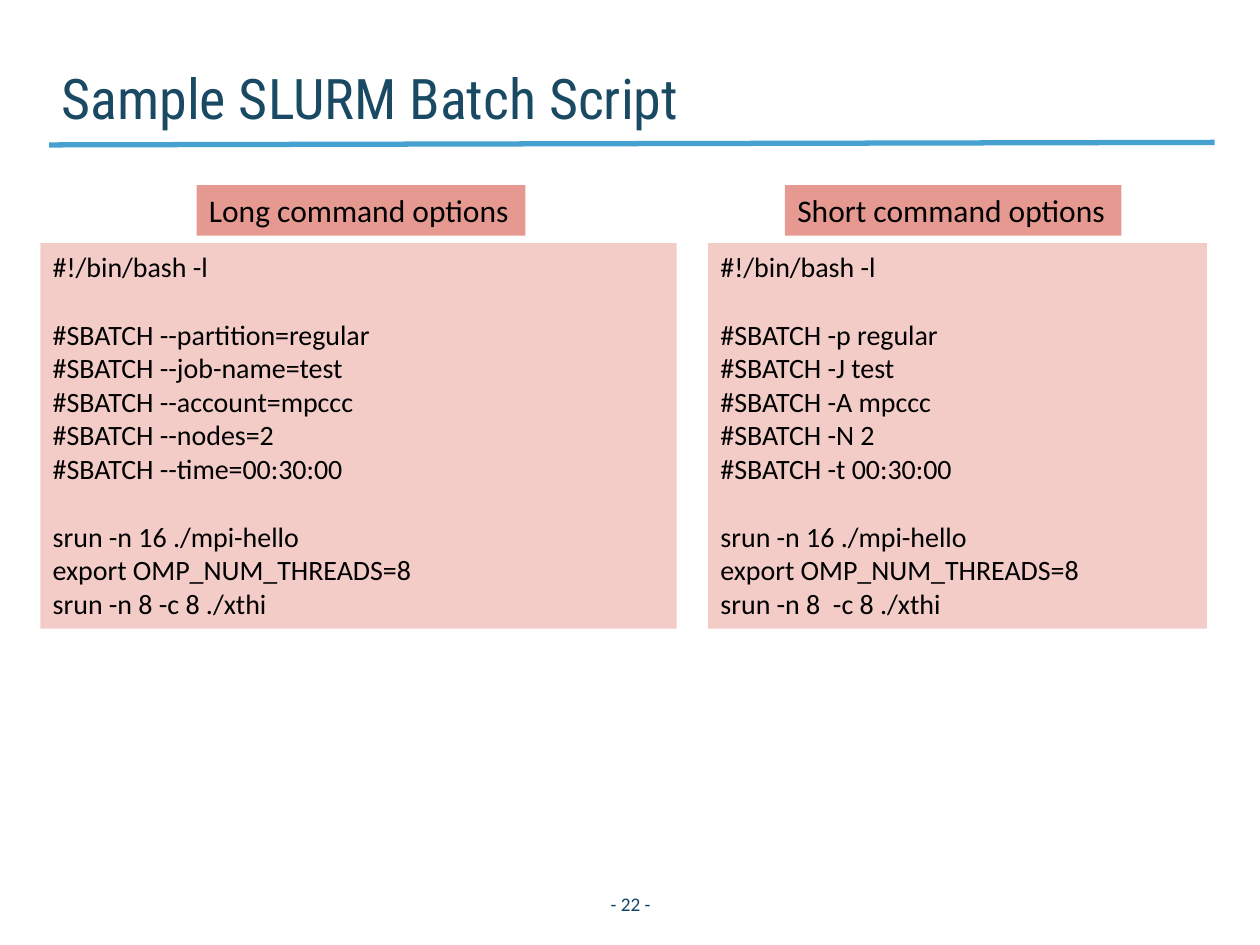
"""Build a slide comparing long and short SLURM batch options."""
from lxml.etree import SubElement
from pptx import Presentation
from pptx.dml.color import RGBColor
from pptx.enum.shapes import MSO_CONNECTOR as Connector, MSO_SHAPE as Shape
from pptx.enum.text import MSO_ANCHOR as Anchor, PP_ALIGN as Align
from pptx.oxml.ns import qn
from pptx.util import Inches, Pt

NAVY = RGBColor(0x19, 0x49, 0x63)
TEAL = RGBColor(0x11, 0x47, 0x66)
BLUE = RGBColor(0x46, 0xA0, 0xD0)
PINK = RGBColor(0xF3, 0xCC, 0xC8)
ROSE = RGBColor(0xE6, 0x99, 0x91)
BLACK = RGBColor(0, 0, 0)

TITLE = "Sample SLURM Batch Script"
PAGE_NUMBER = "- 22 -"
SHEBANG = ["#!/bin/bash -l"]
LAUNCH = ["srun -n 16 ./mpi-hello", "export OMP_NUM_THREADS=8"]
SCRIPTS = [
    {
        "heading": "Long command options", "heading_span": (1.56, 2.61),
        "code_span": (0.32, 5.05),
        "options": ["--partition=regular", "--job-name=test", "--account=mpccc",
                    "--nodes=2", "--time=00:30:00"],
        "last": "srun -n 8 -c 8 ./xthi",
    },
    {
        "heading": "Short command options", "heading_span": (6.23, 2.67),
        "code_span": (5.62, 3.96),
        "options": ["-p regular", "-J test", "-A mpccc", "-N 2", "-t 00:30:00"],
        "last": "srun -n 8  -c 8 ./xthi",
    },
]
HEADING_TOP, HEADING_HEIGHT = 1.47, 0.4
CODE_TOP, CODE_HEIGHT = 1.93, 3.06
BLOCK_GAP = Pt(19.5)


def write(box, blocks, size, color, font="Calibri", align=Align.LEFT,
          anchor=Anchor.TOP, wrap=True):
    """Write blocks of lines, with a gap above every block but the first."""
    frame = box.text_frame
    frame.word_wrap = wrap
    frame.vertical_anchor = anchor
    lines = [(text, block > 0 and row == 0)
             for block, texts in enumerate(blocks) for row, text in enumerate(texts)]
    for index, (text, gap) in enumerate(lines):
        para = frame.add_paragraph() if index else frame.paragraphs[0]
        para.alignment = align
        if gap:
            para.space_before = BLOCK_GAP
        span = para.add_run()
        span.text = text
        span.font.name = font
        span.font.size = Pt(size)
        span.font.color.rgb = color


def add_panel(page, place, fill):
    """Add a filled rectangle without outline or shadow."""
    panel = page.shapes.add_shape(Shape.RECTANGLE, *map(Inches, place))
    panel.shadow.inherit = False
    panel.fill.solid()
    panel.fill.fore_color.rgb = fill
    panel.line.fill.background()
    return panel


def main():
    """Compose and save the deck."""
    deck = Presentation()
    deck.slide_width, deck.slide_height = Inches(10), Inches(7.5)
    page = deck.slides.add_slide(deck.slide_layouts[6])

    rule = page.shapes.add_connector(
        Connector.STRAIGHT, *map(Inches, (0.39, 1.15, 9.64, 1.13)))
    rule.line.color.rgb = BLUE
    rule.line.width = Pt(3)
    SubElement(rule._element.spPr, qn("a:effectLst"))

    title = page.shapes.add_textbox(*map(Inches, (0.39, 0.2, 7.46, 0.84)))
    title.text_frame.margin_top = title.text_frame.margin_bottom = 0
    write(title, [[TITLE]], 32, NAVY, "Roboto Condensed", anchor=Anchor.BOTTOM)

    number = page.shapes.add_textbox(*map(Inches, (4.5, 6.97, 1.01, 0.4)))
    write(number, [[PAGE_NUMBER]], 11, TEAL, align=Align.CENTER, anchor=Anchor.MIDDLE)

    for script in SCRIPTS:
        left, width = script["code_span"]
        code = add_panel(page, (left, CODE_TOP, width, CODE_HEIGHT), PINK)
        options = [f"#SBATCH {option}" for option in script["options"]]
        write(code, [SHEBANG, options, LAUNCH + [script["last"]]], 16, BLACK)

        left, width = script["heading_span"]
        heading = add_panel(page, (left, HEADING_TOP, width, HEADING_HEIGHT), ROSE)
        write(heading, [[script["heading"]]], 18, BLACK, wrap=False)

    deck.save("out.pptx")


if __name__ == "__main__":
    main()
